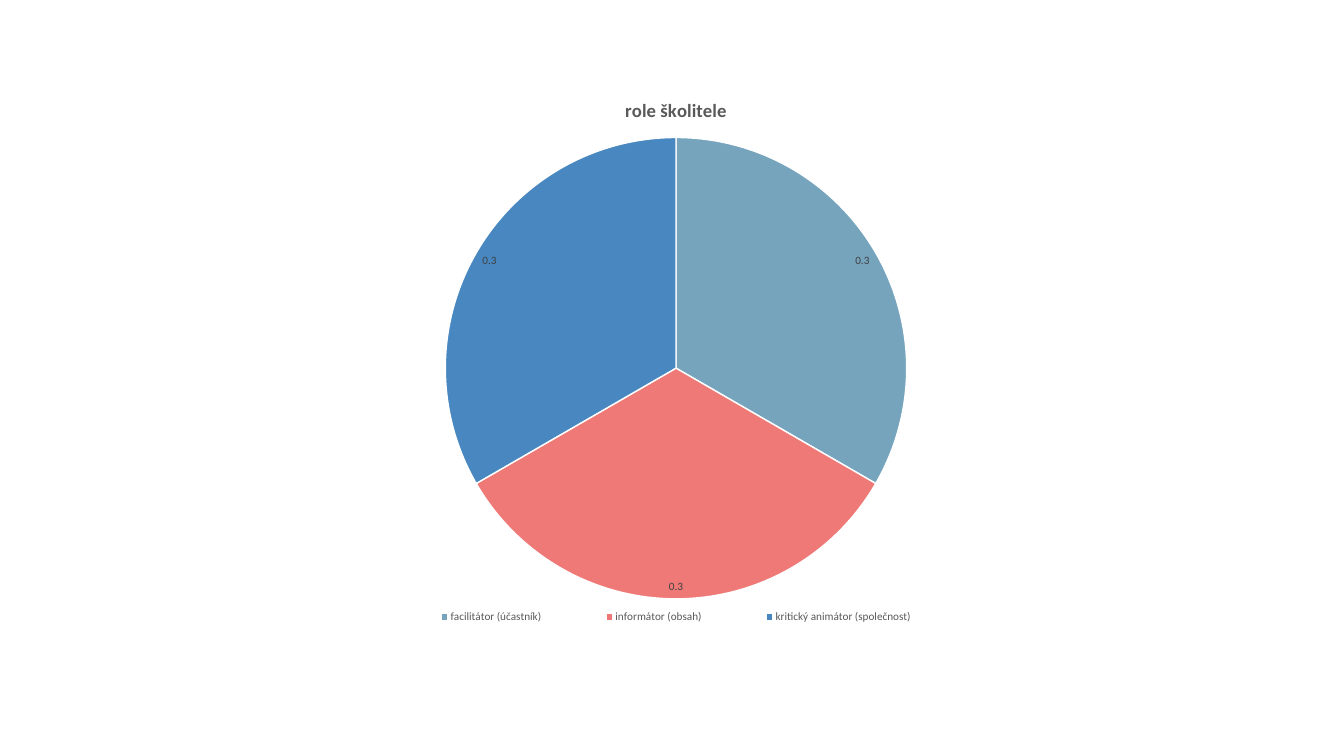
"""Build a slide with a pie chart of the trainer's roles."""
from lxml import etree
from pptx import Presentation
from pptx.chart.data import CategoryChartData
from pptx.dml.color import RGBColor
from pptx.enum.chart import XL_CHART_TYPE, XL_LABEL_POSITION, XL_LEGEND_POSITION
from pptx.oxml.ns import qn
from pptx.util import Inches, Pt

PIE = XL_CHART_TYPE.PIE
BOTTOM = XL_LEGEND_POSITION.BOTTOM
BEST_FIT = XL_LABEL_POSITION.BEST_FIT

WHITE = RGBColor(0xFF, 0xFF, 0xFF)
BLACK = RGBColor(0x00, 0x00, 0x00)
GREY = RGBColor(0x59, 0x59, 0x59)
DARK_GREY = RGBColor(0x40, 0x40, 0x40)
TEAL = RGBColor(0x76, 0xA4, 0xBD)
CORAL = RGBColor(0xEE, 0x79, 0x76)
BLUE = RGBColor(0x48, 0x87, 0xC0)

TITLE = "role školitele"
ROLES = [
    ("facilitátor (účastník)", 0.3, TEAL),
    ("informátor (obsah)", 0.3, CORAL),
    ("kritický animátor (společnost)", 0.3, BLUE),
]
CHART_BOX = (3.46, 1.18, 13.2, 8.22)
LEGEND_BOX = {"x": 2.2, "y": 7.8, "w": 8.8, "h": 0.4}


def set_font(font, size, color, bold=False):
    font.name = "Calibri"
    font.size = Pt(size)
    font.color.rgb = color
    font.bold = bold


def place_legend(legend):
    layout = etree.Element(qn("c:layout"))
    manual = etree.SubElement(layout, qn("c:manualLayout"))
    for key in "xy":
        etree.SubElement(manual, qn(f"c:{key}Mode")).set("val", "edge")
    width, height = CHART_BOX[2:]
    for key, value in LEGEND_BOX.items():
        share = value / (width if key in "xw" else height)
        etree.SubElement(manual, qn(f"c:{key}")).set("val", f"{share:.4f}")
    element = legend._element
    for old in element.findall(qn("c:layout")):
        element.remove(old)
    element.find(qn("c:legendPos")).addnext(layout)


def add_roles_chart(slide):
    names, values, colors = zip(*ROLES)
    data = CategoryChartData()
    data.categories = names
    data.add_series(TITLE, values)
    box = [Inches(v) for v in CHART_BOX]
    chart = slide.shapes.add_chart(PIE, *box, data).chart
    set_font(chart.font, 10, BLACK)

    chart.has_title = True
    tf = chart.chart_title.text_frame
    tf.text = TITLE
    set_font(tf.paragraphs[0].runs[0].font, 20, GREY, bold=True)
    chart.chart_title.include_in_layout = False

    chart.has_legend = True
    chart.legend.position = BOTTOM
    chart.legend.include_in_layout = False
    set_font(chart.legend.font, 12, GREY)
    place_legend(chart.legend)

    plot = chart.plots[0]
    plot.vary_by_categories = True
    series = plot.series[0]
    for i, color in enumerate(colors):
        fmt = series.points[i].format
        fmt.fill.solid()
        fmt.fill.fore_color.rgb = color
        fmt.line.color.rgb = WHITE
        fmt.line.width = Pt(1.5)

    labels = series.data_labels
    labels.show_value = True
    labels.show_percentage = False
    labels.position = BEST_FIT
    set_font(labels.font, 12, DARK_GREY)


def main():
    prs = Presentation()
    prs.slide_width, prs.slide_height = Inches(20), Inches(11.25)
    slide = prs.slides.add_slide(prs.slide_layouts[6])
    add_roles_chart(slide)
    prs.save("out.pptx")


if __name__ == "__main__":
    main()
